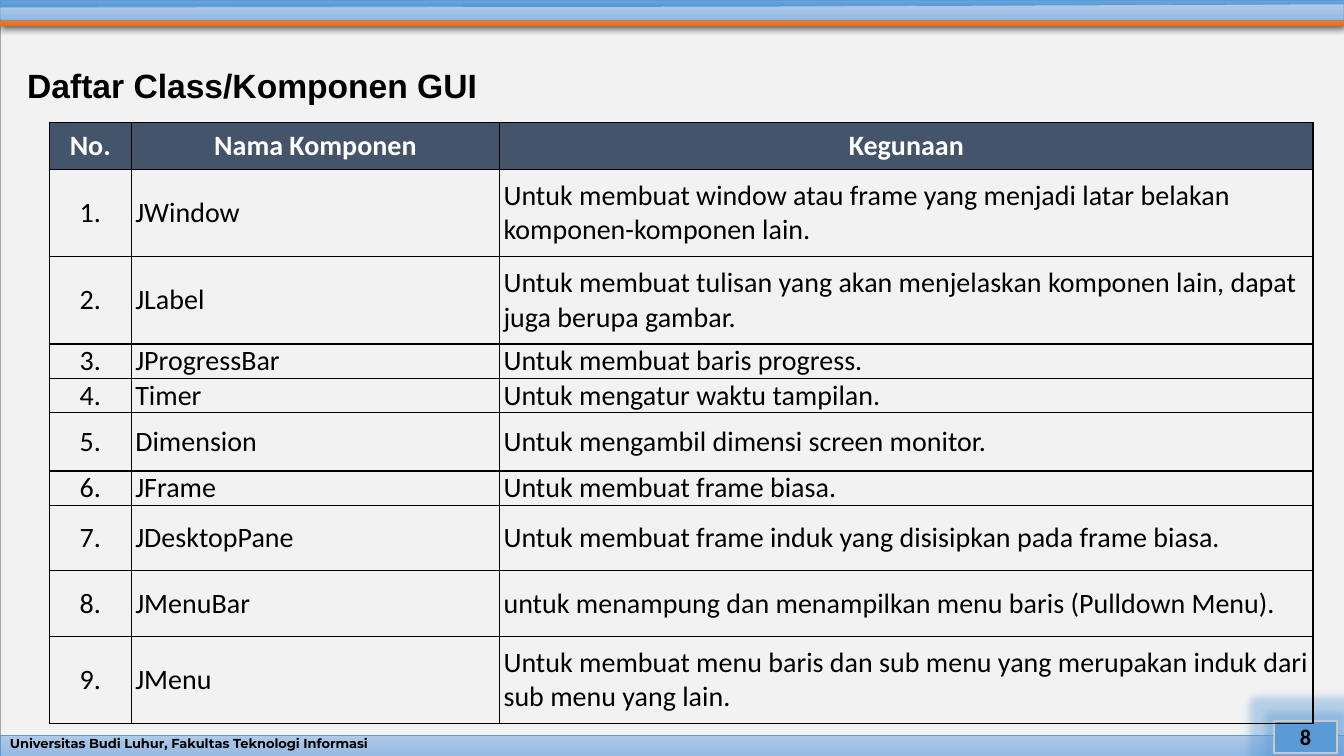
import copy

import lxml.etree
import pptx
import pptx.dml.color
import pptx.enum.shapes
import pptx.enum.text
import pptx.oxml
import pptx.oxml.ns
import pptx.util

Cm = pptx.util.Cm
Pt = pptx.util.Pt
RGB = pptx.dml.color.RGBColor.from_string
ALIGN = pptx.enum.text.PP_ALIGN
MIDDLE = pptx.enum.text.MSO_ANCHOR.MIDDLE
RECTANGLE = pptx.enum.shapes.MSO_SHAPE.RECTANGLE
NAMESPACE = pptx.oxml.ns.nsdecls("a")
qn = pptx.oxml.ns.qn

COLORS = {
    "page": "F2F2F2",
    "page_line": "A5A5A5",
    "blue": "5B9BD5",
    "badge_line": "C9C9C9",
    "header": "44546A",
    "black": "000000",
    "white": "FFFFFF",
}
GRADIENTS = {
    "orange": ["F18C57", "F67B28", "E56C19"],
    "light": ["B1CBE9", "A3C1E5", "93B9E4"],
    "dark": ["71A6DB", "559BDB", "448ACA"],
}
WIDTH, HEIGHT = 33.87, 19.05


def paint(shape, fill, line=None, line_width=0.5):
    shape.shadow.inherit = False
    if fill in GRADIENTS:
        shape.fill.gradient()
        shape.fill.gradient_angle = 270
        stop_list = shape._element.spPr.find(".//" + qn("a:gsLst"))
        stop_list.insert(1, copy.deepcopy(stop_list[0]))
        for index, stop in enumerate(shape.fill.gradient_stops):
            stop.position = index / 2
            stop.color.rgb = RGB(GRADIENTS[fill][index])
    else:
        shape.fill.solid()
        shape.fill.fore_color.rgb = RGB(COLORS[fill])
    if line:
        shape.line.color.rgb = RGB(COLORS[line])
        shape.line.width = Pt(line_width)
    else:
        shape.line.fill.background()


def write(text_frame, text, font, size, color="black", bold=True, align=ALIGN.LEFT, spacing=None):
    text_frame.text = text
    text_frame.word_wrap = True
    text_frame.vertical_anchor = MIDDLE
    paragraph = text_frame.paragraphs[0]
    paragraph.alignment = align
    paragraph.line_spacing = spacing
    run_font = paragraph.runs[0].font
    for name, value in {"name": font, "size": Pt(size), "bold": bold}.items():
        setattr(run_font, name, value)
    run_font.color.rgb = RGB(COLORS[color])


presentation = pptx.Presentation()
presentation.slide_width = Cm(WIDTH)
presentation.slide_height = Cm(HEIGHT)
slide = presentation.slides.add_slide(presentation.slide_layouts[5])
shapes = slide.shapes

page = shapes.add_shape(RECTANGLE, 0, Cm(0.1), Cm(WIDTH), Cm(HEIGHT - 0.1))
paint(page, "page", "page_line")

outlines = {
    "orange": [(WIDTH, 0.66), (0, 0.66), (0.08, 0.33), (WIDTH, 0.33)],
    "light": [(WIDTH, 0.51), (0, 0.51), (0, 0.18), (18.6, 0.16), (WIDTH, 0.1)],
}
bands = {}
for name, points in outlines.items():
    corners = [(Cm(x), Cm(y)) for x, y in points]
    builder = shapes.build_freeform(*corners[0])
    builder.add_line_segments(corners[1:])
    bands[name] = builder.convert_to_shape()
paint(bands["orange"], "orange")
paint(bands["light"], "light", "blue")

for name, top, height in [("light", HEIGHT - 0.53, 0.53), ("dark", 0, 0.28)]:
    bar = shapes.add_shape(RECTANGLE, 0, Cm(top), Cm(WIDTH), Cm(height))
    paint(bar, name, "blue")
shapes._spTree.append(bands["light"]._element)

footer = shapes.add_textbox(0, Cm(HEIGHT - 0.53), Cm(WIDTH), Cm(0.53))
write(footer.text_frame, "Universitas Budi Luhur, Fakultas Teknologi Informasi", "Montserrat", 9.3, spacing=0.7)

badge = shapes.add_shape(RECTANGLE, Cm(32.1), Cm(18.16), Cm(1.6), Cm(0.82))
paint(badge, "blue", "badge_line", 1.5)
write(badge.text_frame, "8", "Calibri", 16, align=ALIGN.CENTER)

effects = [
    (bands["orange"], "outerShdw", 'blurRad="57150" dist="19050" dir="5400000"', "black", 63000),
    (badge, "glow", 'rad="139700"', "blue", 40000),
]
for shape, effect, settings, color, alpha in effects:
    shape._element.spPr.find(qn("a:effectLst")).append(pptx.oxml.parse_xml(
        f'<a:{effect} {NAMESPACE} {settings}><a:srgbClr val="{COLORS[color]}">'
        f'<a:alpha val="{alpha}"/></a:srgbClr></a:{effect}>'))

title = shapes.title
placement = {"left": Cm(0.43), "top": Cm(1.35), "width": Cm(32.64), "height": Cm(1.73)}
for name, value in placement.items():
    setattr(title, name, value)
write(title.text_frame, "Daftar Class/Komponen GUI", "Arial", 24, spacing=0.9)
shapes._spTree.append(title._element)

components = [
    ("JWindow", "Untuk membuat window atau frame yang menjadi latar belakan komponen-komponen lain.", 2.2),
    ("JLabel", "Untuk membuat tulisan yang akan menjelaskan komponen lain, dapat juga berupa gambar.", 2.2),
    ("JProgressBar", "Untuk membuat baris progress.", 0.85),
    ("Timer", "Untuk mengatur waktu tampilan.", 0.85),
    ("Dimension", "Untuk mengambil dimensi screen monitor.", 1.47),
    ("JFrame", "Untuk membuat frame biasa.", 0.85),
    ("JDesktopPane", "Untuk membuat frame induk yang disisipkan pada frame biasa.", 1.65),
    ("JMenuBar", "untuk menampung dan menampilkan menu baris (Pulldown Menu).", 1.65),
    ("JMenu", "Untuk membuat menu baris dan sub menu yang merupakan induk dari sub menu yang lain.", 2.2),
]
rows = [("No.", "Nama Komponen", "Kegunaan", 1.19)]
rows += [(f"{number}.", *component) for number, component in enumerate(components, 1)]
column_widths = [2.07, 9.28, 20.5]
table = shapes.add_table(
    len(rows), len(column_widths), Cm(1.24), Cm(3.08),
    Cm(sum(column_widths)), Cm(sum(row[-1] for row in rows))).table
table.horz_banding = False
for column, width in zip(table.columns, column_widths):
    column.width = Cm(width)
cell_margins = {"margin_left": Cm(0.1), "margin_right": Cm(0.1), "margin_top": 0, "margin_bottom": 0}
for row_index, (*texts, height) in enumerate(rows):
    table.rows[row_index].height = Cm(height)
    is_header = row_index == 0
    for column_index, text in enumerate(texts):
        cell = table.cell(row_index, column_index)
        centered = is_header or column_index == 0
        write(cell.text_frame, text, "Calibri", 20, "white" if is_header else "black",
              is_header, ALIGN.CENTER if centered else ALIGN.LEFT)
        cell.vertical_anchor = MIDDLE
        for name, value in cell_margins.items():
            setattr(cell, name, value)
        if is_header:
            cell.fill.solid()
            cell.fill.fore_color.rgb = RGB(COLORS["header"])
        else:
            cell.fill.background()
        properties = cell._tc.get_or_add_tcPr()
        for index, side in enumerate(["lnL", "lnR", "lnT", "lnB"]):
            border = lxml.etree.Element(qn(f"a:{side}"), w=str(Pt(1)))
            border_fill = lxml.etree.SubElement(border, qn("a:solidFill"))
            lxml.etree.SubElement(border_fill, qn("a:srgbClr"), val=COLORS["black"])
            properties.insert(index, border)

presentation.save("out.pptx")
